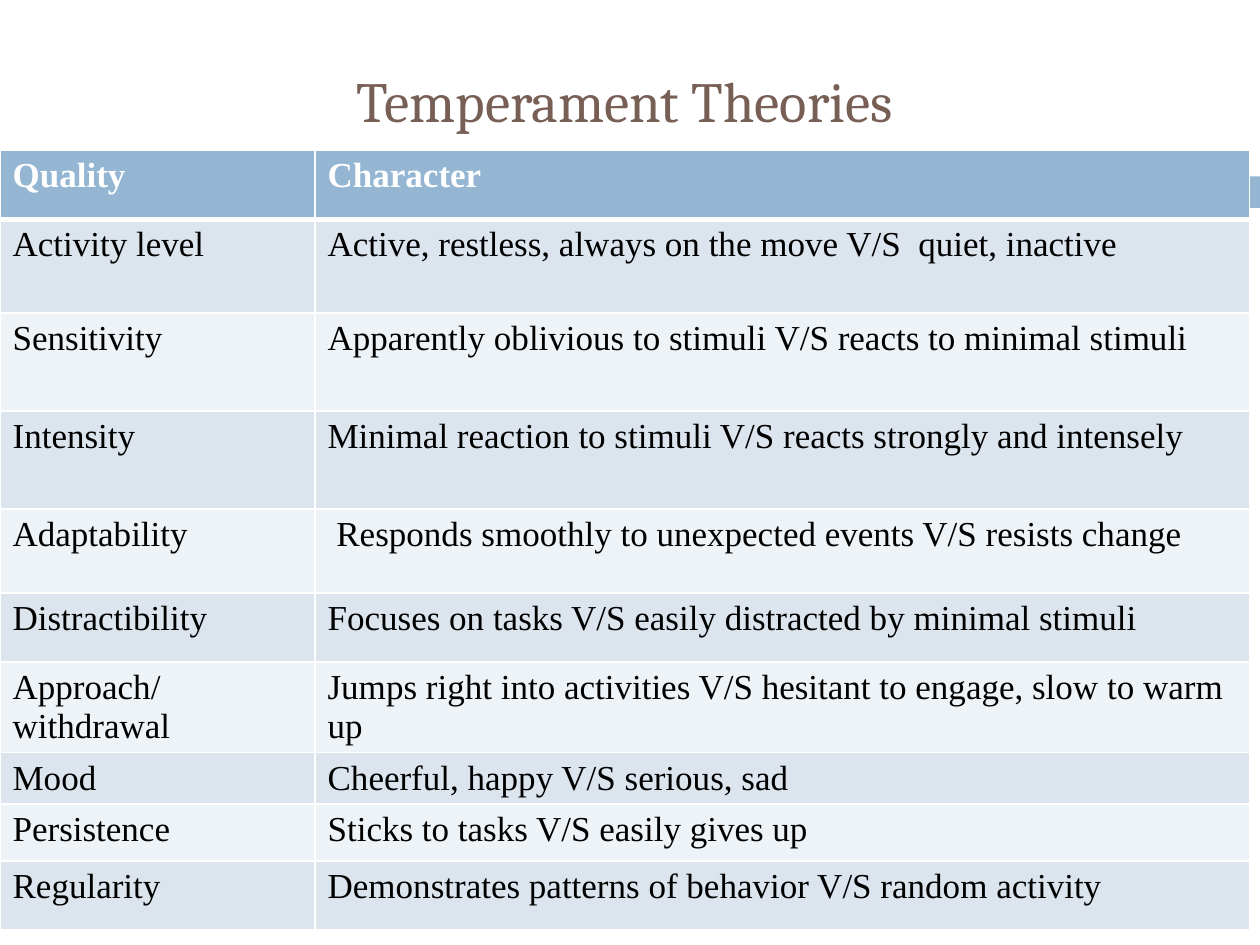
from dataclasses import dataclass

from lxml import etree
from pptx import Presentation
from pptx.dml.color import RGBColor
from pptx.enum import shapes, text
from pptx.oxml import ns
from pptx.util import Pt


@dataclass(frozen=True)
class Theme:
    """Colours, fonts and type sizes of the slide."""
    title: str = "775F55"
    header: str = "94B6D2"
    bands: tuple = ("DCE5EE", "EEF3F7")
    light: str = "FFFFFF"
    dark: str = "000000"
    title_font: str = "Cambria"
    body_font: str = "Times New Roman"
    title_size: float = 32.4
    body_size: float = 20


THEME = Theme()
COLUMN_WIDTHS = (180, 534)
TRAITS = (
    ("Quality", "Character", 39.6),
    ("Activity level", "Active, restless, always on the move V/S  quiet, inactive", 53.5),
    ("Sensitivity", "Apparently oblivious to stimuli V/S reacts to minimal stimuli", 56),
    ("Intensity", "Minimal reaction to stimuli V/S reacts strongly and intensely", 56),
    ("Adaptability", " Responds smoothly to unexpected events V/S resists change", 48),
    ("Distractibility", "Focuses on tasks V/S easily distracted by minimal stimuli", 39.6),
    ("Approach/withdrawal",
     "Jumps right into activities V/S hesitant to engage, slow to warm up", 47.5),
    ("Mood", "Cheerful, happy V/S serious, sad", 29.6),
    ("Persistence", "Sticks to tasks V/S easily gives up", 32.4),
    ("Regularity", "Demonstrates patterns of behavior V/S random activity", 39.6),
)


def style_font(font, name, size, colour, bold=False):
    """Set the face, size, colour and weight of a font."""
    font.name, font.size, font.bold = name, Pt(size), bold
    font.color.rgb = RGBColor.from_string(colour)


def paint(fill, colour):
    """Give a fill one solid colour."""
    fill.solid()
    fill.fore_color.rgb = RGBColor.from_string(colour)


def add_title(page, box, wording):
    """Place the centred slide title in the box."""
    title = page.shapes.title
    title.left, title.top, title.width, title.height = map(Pt, box)
    frame = title.text_frame
    frame.text = wording
    frame.auto_size = text.MSO_AUTO_SIZE.NONE
    frame.vertical_anchor = text.MSO_ANCHOR.MIDDLE
    para = frame.paragraphs[0]
    para.alignment = text.PP_ALIGN.CENTER
    style_font(para.font, THEME.title_font, THEME.title_size, THEME.title)


def add_band(page, box):
    """Draw the plain accent band across the box."""
    band = page.shapes.add_shape(shapes.MSO_SHAPE.RECTANGLE, *map(Pt, box))
    band.shadow.inherit = False
    paint(band.fill, THEME.header)
    band.line.fill.background()


def set_borders(cell, widths):
    """Rule the left, right, top and bottom edges of a cell."""
    properties = cell._tc.get_or_add_tcPr()
    for index, (edge, width) in enumerate(zip("LRTB", widths)):
        line = etree.Element(ns.qn(f"a:ln{edge}"), w=str(Pt(width)))
        solid = etree.SubElement(line, ns.qn("a:solidFill"))
        etree.SubElement(solid, ns.qn("a:srgbClr"), val=THEME.light)
        properties.insert(index, line)


def add_trait_table(page, box, traits):
    """Fill the box with a header row and banded trait rows."""
    table = page.shapes.add_table(len(traits), len(COLUMN_WIDTHS), *map(Pt, box)).table
    for column, width in zip(table.columns, COLUMN_WIDTHS):
        column.width = Pt(width)
    for index, (*wordings, height) in enumerate(traits):
        table.rows[index].height = Pt(height)
        header = index == 0
        fill = THEME.header if header else THEME.bands[(index - 1) % 2]
        colour = THEME.light if header else THEME.dark
        borders = (1, 1, 3 if index == 1 else 1, 3 if header else 1)
        for cell, wording in zip(table.rows[index].cells, wordings):
            cell.text = wording
            paint(cell.fill, fill)
            set_borders(cell, borders)
            para = cell.text_frame.paragraphs[0]
            para.alignment = text.PP_ALIGN.LEFT
            style_font(para.font, THEME.body_font, THEME.body_size, colour, header)


def main():
    """Build the deck and save it."""
    deck = Presentation()
    deck.slide_width, deck.slide_height = Pt(720), Pt(540)
    page = deck.slides.add_slide(deck.slide_layouts[5])
    add_title(page, (18, 18, 678, 78), "Temperament Theories")
    add_band(page, (46.8, 100.8, 673.2, 18))
    table_height = sum(height for *_, height in TRAITS)
    add_trait_table(page, (0, 85.7, sum(COLUMN_WIDTHS), table_height), TRAITS)
    deck.save("out.pptx")


if __name__ == "__main__":
    main()
